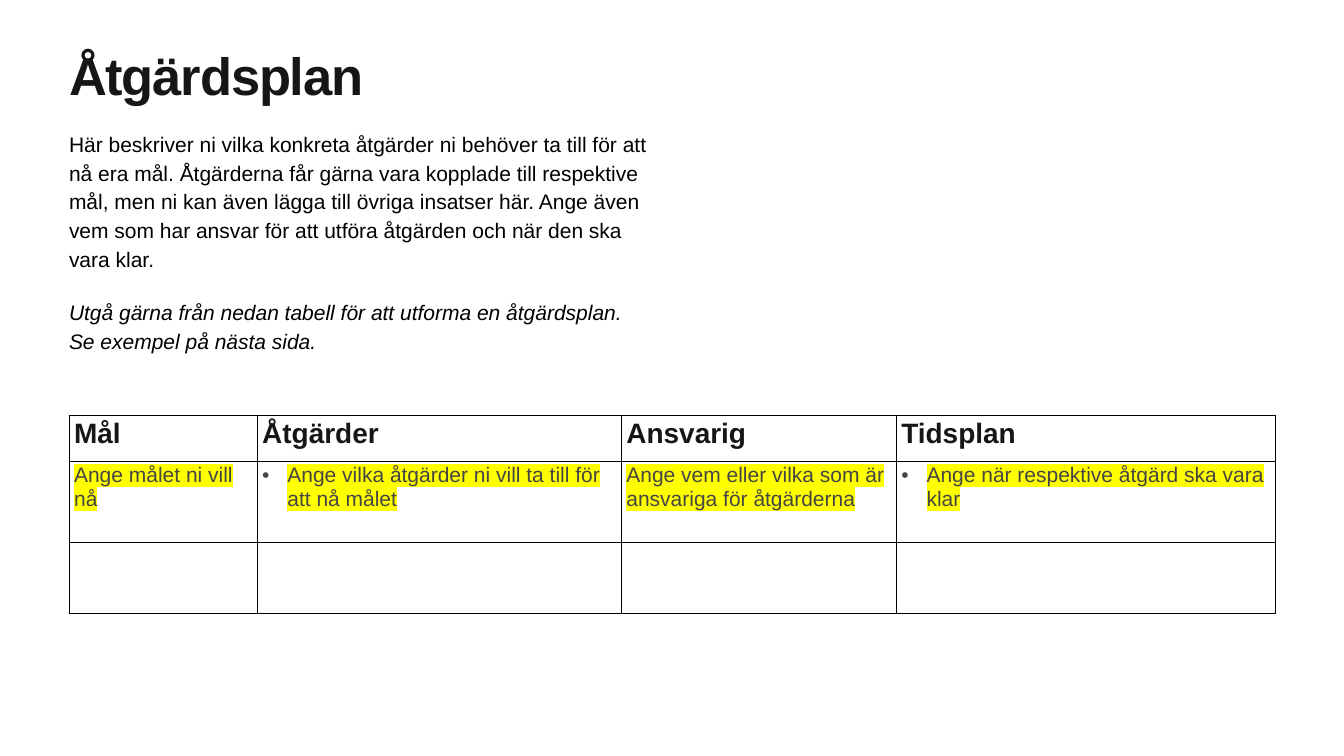
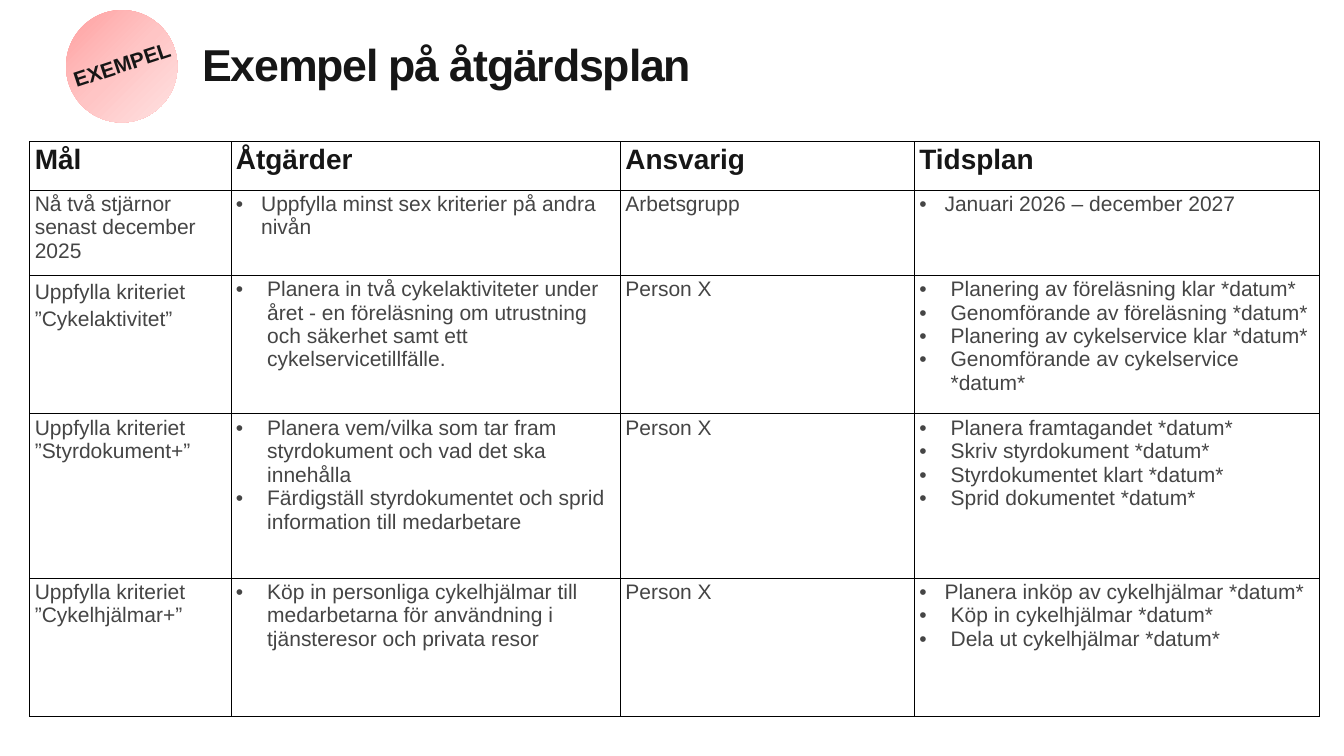
from copy import deepcopy
from dataclasses import dataclass

from lxml import etree
from pptx import Presentation
from pptx.dml.color import RGBColor
from pptx.enum.shapes import MSO_SHAPE
from pptx.enum.text import MSO_ANCHOR, MSO_AUTO_SIZE, PP_ALIGN
from pptx.oxml.ns import qn
from pptx.util import Inches, Pt

ELLIPSE = MSO_SHAPE.OVAL
TOP, MIDDLE = MSO_ANCHOR.TOP, MSO_ANCHOR.MIDDLE
LEFT, CENTER = PP_ALIGN.LEFT, PP_ALIGN.CENTER
FIXED, GROW = MSO_AUTO_SIZE.NONE, MSO_AUTO_SIZE.SHAPE_TO_FIT_TEXT

GRID_COLUMNS, GRID_ROWS = 26.67, 15
GRID_UNIT = Inches(1)


@dataclass(frozen=True)
class Theme:
    font: str = "Arial"
    ink: str = "161616"
    black: str = "000000"
    grey: str = "454545"
    marker: str = "FFFF00"
    paper: str = "FFFFFF"
    badge: tuple = ((0, "FFA0A0"), (0.5, "FFC5C5"), (1, "FFE3E3"))
    title_size: float = 75
    small_title_size: float = 63.8
    header_size: float = 40
    text_size: float = 30
    title_tracking: int = -170
    inset: float = 0.06
    loose: float = 1.14


THEME = Theme()
HEADERS = ["Mål", "Åtgärder", "Ansvarig", "Tidsplan"]
COLUMN_SHARES = [0.156, 0.302, 0.228, 0.314]


@dataclass(frozen=True)
class Box:
    left: float
    top: float
    width: float
    height: float

    def emu(self):
        sides = (self.left, self.top, self.width, self.height)
        return [grid(side) for side in sides]

    def inner(self, left, top, width, height):
        return Box(self.left + left * self.width, self.top + top * self.height,
                   width * self.width, height * self.height)


def grid(length):
    return round(length * GRID_UNIT)


def assign(target, values):
    for name, value in values.items():
        setattr(target, name, value)


def sub(parent, tag, **attributes):
    return etree.SubElement(parent, qn(tag), attributes)


def style_para(para, size, color, bold=False, italic=False, tracking=None, highlight=None):
    for span in para.runs:
        assign(span.font, dict(name=THEME.font, size=Pt(size), bold=bold, italic=italic))
        span.font.color.rgb = RGBColor.from_string(color)
        properties = span.font._element
        if tracking:
            properties.set("spc", str(tracking))
        if highlight:
            marker = etree.Element(qn("a:highlight"))
            sub(marker, "a:srgbClr", val=highlight)
            properties.find(qn("a:solidFill")).addnext(marker)


def indent_para(para, left, bullet=None):
    properties = para._p.get_or_add_pPr()
    properties.set("marL", str(grid(left)))
    properties.set("indent", str(-grid(left) if bullet else 0))
    if bullet:
        sub(properties, "a:buFont", typeface=THEME.font)
        sub(properties, "a:buChar", char=bullet)


def format_frame(frame, anchor=TOP, auto_size=FIXED):
    inset = grid(THEME.inset)
    assign(frame, dict(word_wrap=True, vertical_anchor=anchor, auto_size=auto_size,
                       margin_left=inset, margin_right=inset,
                       margin_top=inset, margin_bottom=inset))


def add_title(page, box, text, size, indent=0, line_spacing=1.0):
    title = page.shapes.title
    assign(title, dict(zip(("left", "top", "width", "height"), box.emu())))
    format_frame(title.text_frame)
    para = title.text_frame.paragraphs[0]
    para.text = text
    indent_para(para, indent)
    assign(para, dict(alignment=LEFT, line_spacing=line_spacing))
    style_para(para, size, THEME.ink, bold=True, tracking=THEME.title_tracking)


def add_introduction(page, box, guidance, hint):
    frame = page.shapes.add_textbox(*box.emu()).text_frame
    format_frame(frame)
    first, second = frame.paragraphs[0], frame.add_paragraph()
    second.space_before = Pt(20)
    for para, text, italic in ((first, guidance, False), (second, hint, True)):
        para.text = text
        assign(para, dict(line_spacing=THEME.loose, space_after=Pt(15)))
        style_para(para, THEME.text_size, THEME.black, italic=italic)


def add_badge(page, box, label):
    disc = page.shapes.add_shape(ELLIPSE, *box.emu())
    disc.shadow.inherit = False
    disc.line.fill.background()
    disc.fill.gradient()
    disc.fill.gradient_angle = 315
    stops = disc._element.spPr.find(qn("a:gradFill")).find(qn("a:gsLst"))
    stops.append(deepcopy(stops[-1]))
    for stop, (position, color) in zip(disc.fill.gradient_stops, THEME.badge):
        stop.position = position
        stop.color.rgb = RGBColor.from_string(color)

    caption = page.shapes.add_textbox(*box.inner(0, 0.34, 1, 0.28).emu())
    caption.rotation = 341.6
    format_frame(caption.text_frame, MIDDLE, GROW)
    para = caption.text_frame.paragraphs[0]
    para.text = label
    para.alignment = CENTER
    style_para(para, THEME.text_size, THEME.ink, bold=True)


def bullets(*items, indent=0.62):
    return [(item, indent) for item in items]


def format_cell(cell):
    cell.fill.background()
    properties = cell._tc.get_or_add_tcPr()
    for index, side in enumerate(("a:lnL", "a:lnR", "a:lnT", "a:lnB")):
        border = etree.Element(qn(side), w=str(Pt(1)))
        sub(sub(border, "a:solidFill"), "a:srgbClr", val=THEME.black)
        properties.insert(index, border)


def fill_cell(cell, content, **look):
    items = [(content, 0)] if isinstance(content, str) else content
    for index, (text, indent) in enumerate(items):
        para = cell.text_frame.add_paragraph() if index else cell.text_frame.paragraphs[0]
        para.text = text
        if indent:
            indent_para(para, indent, "•")
        style_para(para, **look)


def add_plan_table(page, box, row_heights, body, highlight=None):
    rows = [HEADERS] + body
    table = page.shapes.add_table(len(rows), len(HEADERS), *box.emu()).table
    assign(table, dict(first_row=False, horz_banding=False))
    for column, share in zip(table.columns, COLUMN_SHARES):
        column.width = grid(share * box.width)
    for row, height in zip(table.rows, row_heights):
        row.height = grid(height)
    header_look = dict(size=THEME.header_size, color=THEME.ink, bold=True)
    body_look = dict(size=THEME.text_size, color=THEME.grey, highlight=highlight)
    for index, contents in enumerate(rows):
        look = body_look if index else header_look
        for cell, content in zip(table.rows[index].cells, contents):
            format_cell(cell)
            fill_cell(cell, content, **look)
    return table


def add_page(deck):
    page = deck.slides.add_slide(deck.slide_layouts[5])
    page.background.fill.solid()
    page.background.fill.fore_color.rgb = RGBColor.from_string(THEME.paper)
    return page


def build_template_page(deck):
    page = add_page(deck)
    add_title(page, Box(1.31, 0.79, 24.06, 1.77), "Åtgärdsplan", THEME.title_size)
    add_introduction(
        page, Box(1.31, 2.48, 12.03, 6.38),
        "Här beskriver ni vilka konkreta åtgärder ni behöver ta till för att nå era mål. "
        "Åtgärderna får gärna vara kopplade till respektive mål, men ni kan även lägga till "
        "övriga insatser här. Ange även vem som har ansvar för att utföra åtgärden och när "
        "den ska \nvara klar.",
        "Utgå gärna från nedan tabell för att utforma en åtgärdsplan. \n"
        "Se exempel på nästa sida.")
    body = [
        ["Ange målet ni vill nå",
         bullets("Ange vilka åtgärder ni vill ta till för att nå målet", indent=0.5),
         "Ange vem eller vilka som är ansvariga för åtgärderna",
         bullets("Ange när respektive åtgärd ska vara klar", indent=0.5)],
        [""] * len(HEADERS),
    ]
    add_plan_table(page, Box(1.37, 8.24, 23.93, 3.92), [0.91, 1.6, 1.42], body, THEME.marker)


def build_example_page(deck):
    page = add_page(deck)
    add_title(page, Box(1.31, 0.79, 12.77, 1.77), "Exempel på åtgärdsplan",
              THEME.small_title_size, indent=2.64, line_spacing=0.9)
    body = [
        ["Nå två stjärnor senast december 2025",
         bullets("Uppfylla minst sex kriterier på andra nivån", indent=0.5),
         "Arbetsgrupp",
         bullets("Januari 2026 – december 2027", indent=0.5)],
        ["Uppfylla kriteriet ”Cykelaktivitet”",
         bullets("Planera in två cykelaktiviteter under året - en föreläsning om utrustning "
                 "och säkerhet samt ett cykelservicetillfälle."),
         "Person X",
         bullets("Planering av föreläsning klar *datum*", "Genomförande av föreläsning *datum*",
                 "Planering av cykelservice klar *datum*",
                 "Genomförande av cykelservice *datum*")],
        ["Uppfylla kriteriet ”Styrdokument+”",
         bullets("Planera vem/vilka som tar fram styrdokument och vad det ska innehålla",
                 "Färdigställ styrdokumentet och sprid information till medarbetare"),
         "Person X",
         bullets("Planera framtagandet *datum*", "Skriv styrdokument *datum*",
                 "Styrdokumentet klart *datum*", "Sprid dokumentet *datum*")],
        ["Uppfylla kriteriet ”Cykelhjälmar+”",
         bullets("Köp in personliga cykelhjälmar till medarbetarna för användning i "
                 "tjänsteresor och privata resor"),
         "Person X",
         bullets("Planera inköp av cykelhjälmar *datum*", indent=0.5)
         + bullets("Köp in cykelhjälmar *datum*", "Dela ut cykelhjälmar *datum*")],
    ]
    table = add_plan_table(page, Box(0.59, 2.81, 25.59, 11.4),
                           [0.96, 1.69, 2.75, 3.26, 2.74], body)
    table.cell(2, 0).text_frame.paragraphs[0].line_spacing = THEME.loose
    add_badge(page, Box(1.31, 0.2, 2.21, 2.23), "EXEMPEL")


def main():
    deck = Presentation()
    assign(deck, dict(slide_width=grid(GRID_COLUMNS), slide_height=grid(GRID_ROWS)))
    build_template_page(deck)
    build_example_page(deck)
    deck.save("out.pptx")


if __name__ == "__main__":
    main()
